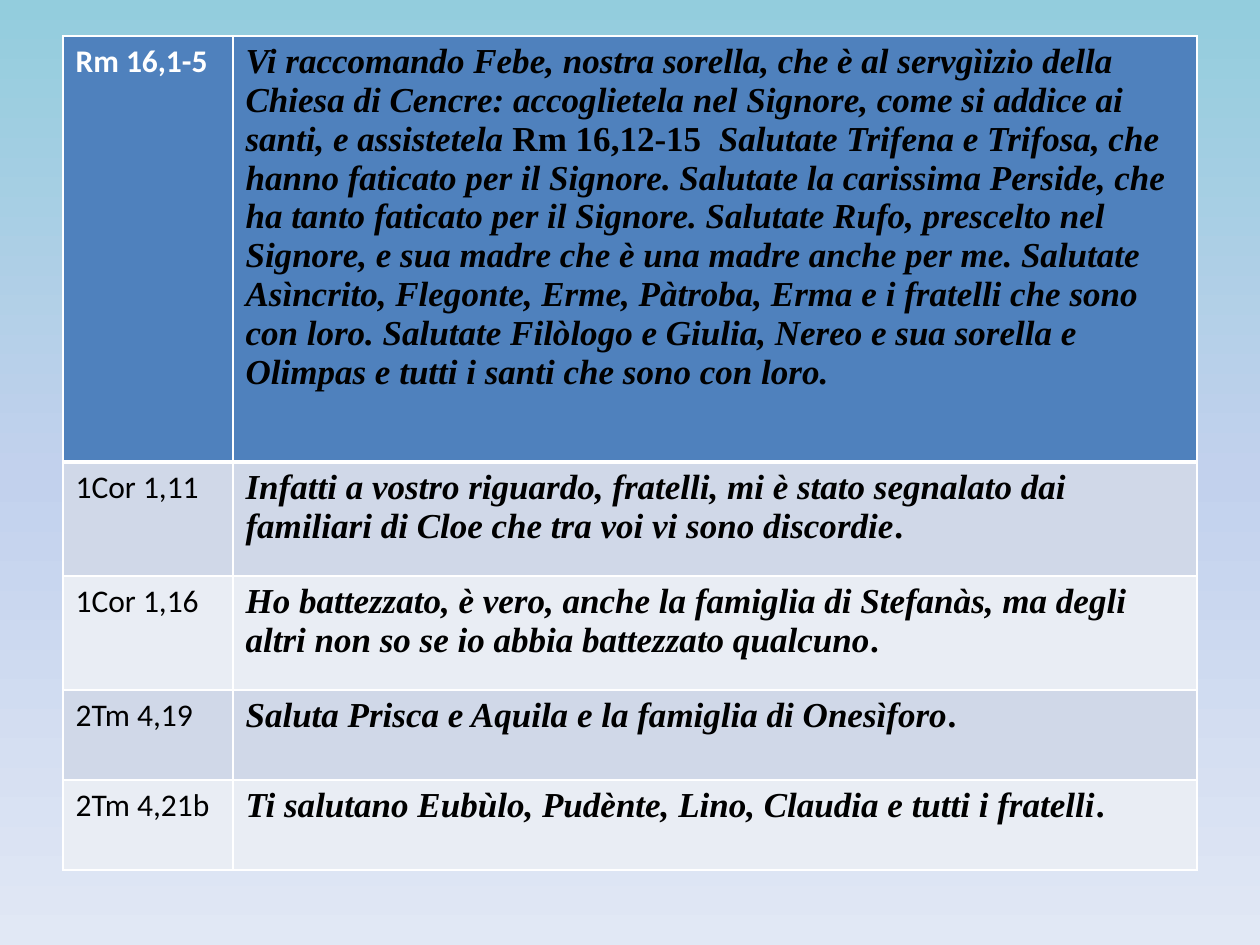
from copy import deepcopy

from lxml import etree
from pptx import Presentation
from pptx.dml.color import RGBColor
from pptx.enum.text import MSO_ANCHOR
from pptx.oxml.ns import qn
from pptx.util import Pt

TOP = MSO_ANCHOR.TOP
SCALE = 914400 // 126

WHITE, BLACK = "FFFFFF", "000000"
HEAD, BANDS = "4F81BD", ("D0D8E8", "E9EDF4")
SKY = ((0, "93CDDD"), (0.5, "C2D1ED"), (1, "E1E8F5"))

LABEL = {"name": "Calibri", "size": Pt(18), "bold": False}
TITLE = {**LABEL, "bold": True}
VERSE = {"name": "Times New Roman", "size": Pt(20), "bold": True, "italic": True}
PLAIN = {**VERSE, "italic": False}

VERSES = [
    ("Rm 16,1-5", [
        ("Vi raccomando Febe, nostra sorella, che è al servgìizio della Chiesa di "
         "Cencre: accoglietela nel Signore, come si addice ai santi, e assistetela ", VERSE),
        ("Rm 16,12-15  ", PLAIN),
        ("Salutate Trifena e Trifosa, che hanno faticato per il Signore. Salutate la "
         "carissima Perside, che ha tanto faticato per il Signore. Salutate Rufo, "
         "prescelto nel Signore, e sua madre che è una madre anche per me. Salutate "
         "Asìncrito, Flegonte, Erme, Pàtroba, Erma e i fratelli che sono con loro. "
         "Salutate Filòlogo e Giulia, Nereo e sua sorella e Olimpas e tutti i santi "
         "che sono con loro.", VERSE)]),
    ("1Cor 1,11", [
        ("Infatti a vostro riguardo, fratelli, mi è stato segnalato dai familiari di "
         "Cloe che tra voi vi sono discordie", VERSE), (".", PLAIN)]),
    ("1Cor 1,16", [
        ("Ho battezzato, è vero, anche la famiglia di Stefanàs, ma degli altri non so "
         "se io abbia battezzato qualcuno", VERSE), (".", PLAIN)]),
    ("2Tm 4,19", [
        ("Saluta Prisca e Aquila e la famiglia di Onesìforo", VERSE), (".", PLAIN)]),
    ("2Tm 4,21b", [
        ("Ti salutano Eubùlo, Pudènte, Lino, Claudia e tutti i fratelli", VERSE),
        (".", PLAIN)]),
]
WIDTHS = (170, 964)
HEIGHTS = (426, 114, 114, 90, 90)


def px(count):
    return count * SCALE


def color(code):
    return RGBColor.from_string(code)


class Page:
    def __init__(self, deck):
        self.slide = deck.slides.add_slide(deck.slide_layouts[6])

    def sky(self, stops):
        fill = self.slide.background.fill
        fill.gradient()
        fill.gradient_angle = 270
        first = fill.gradient_stops[0]
        first.color.rgb = color(stops[0][1])
        group = next(self.slide.element.iter(qn("a:gsLst")))
        group.insert(1, deepcopy(group[0]))
        for stop, (place, code) in zip(fill.gradient_stops, stops):
            stop.position = place
            stop.color.rgb = color(code)

    def text(self, cell, runs, ink):
        para = cell.text_frame.paragraphs[0]
        for words, style in runs:
            run = para.add_run()
            run.text = words
            for key, value in style.items():
                setattr(run.font, key, value)
            run.font.color.rgb = color(ink)

    def edges(self, cell, widths):
        props = cell._tc.get_or_add_tcPr()
        for side, width in widths.items():
            line = etree.SubElement(props, qn(f"a:ln{side}"), w=str(Pt(width)))
            solid = etree.SubElement(line, qn("a:solidFill"))
            etree.SubElement(solid, qn("a:srgbClr"), val=WHITE)

    def table(self, left, top, widths, heights, verses):
        frame = self.slide.shapes.add_table(
            len(heights), len(widths), px(left), px(top), px(sum(widths)), px(sum(heights)))
        grid = frame.table
        for col, width in zip(grid.columns, widths):
            col.width = px(width)
        for index, (label, verse) in enumerate(verses):
            grid.rows[index].height = px(heights[index])
            head = index == 0
            tone = HEAD if head else BANDS[(index - 1) % 2]
            sides = {"L": 1, "R": 1, "T": 3 if index == 1 else 1, "B": 3 if head else 1}
            name = [(label, TITLE if head else LABEL)]
            inks = (WHITE if head else BLACK, BLACK)
            for cell, runs, ink in zip(grid.rows[index].cells, (name, verse), inks):
                self.edges(cell, sides)
                cell.fill.solid()
                cell.fill.fore_color.rgb = color(tone)
                cell.vertical_anchor = TOP
                self.text(cell, runs, ink)


def main():
    deck = Presentation()
    deck.slide_width, deck.slide_height = px(1260), px(945)
    page = Page(deck)
    page.sky(SKY)
    page.table(63, 36, WIDTHS, HEIGHTS, VERSES)
    deck.save("out.pptx")


if __name__ == "__main__":
    main()
